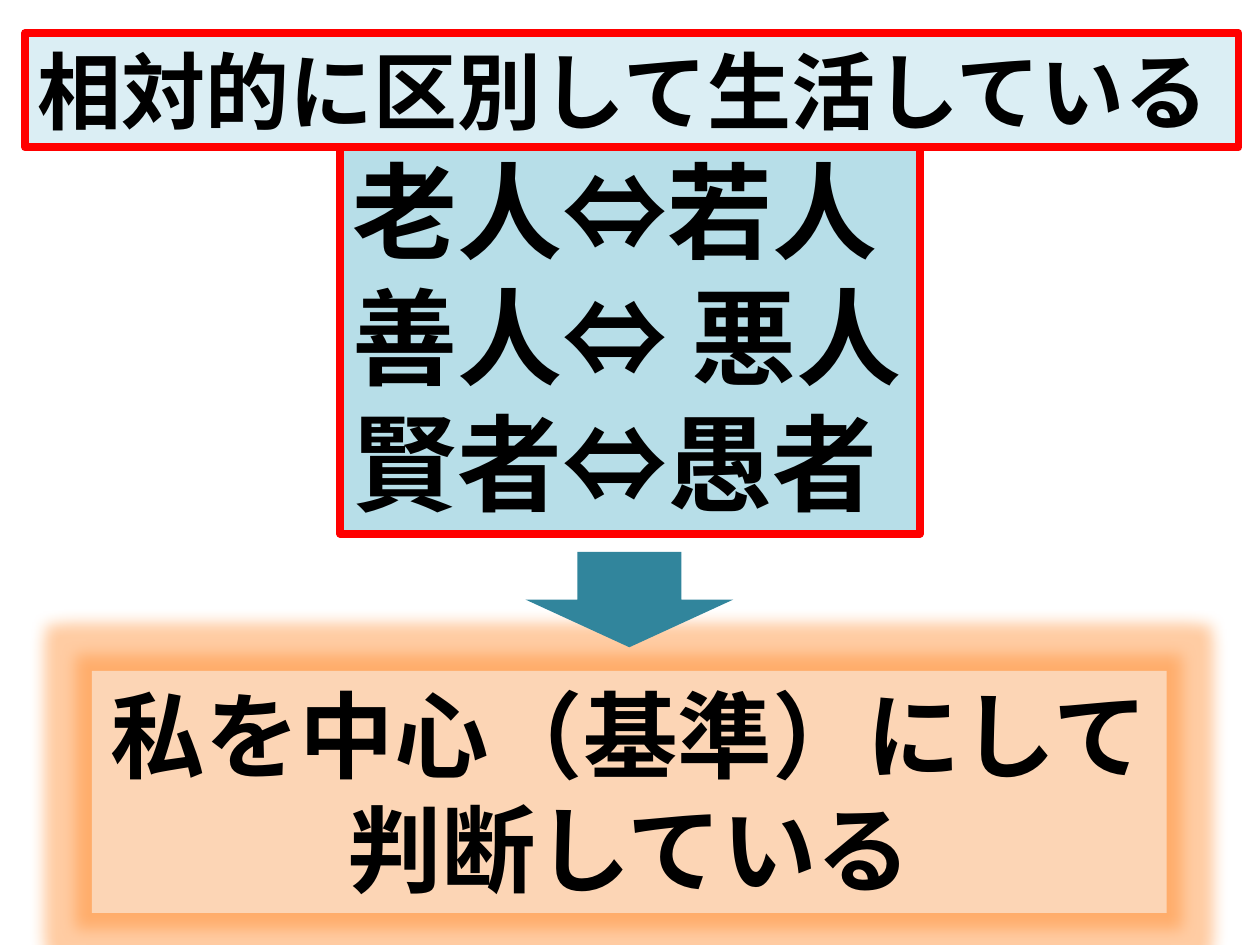
from pptx import Presentation
from pptx.dml.color import RGBColor
from pptx.enum.shapes import MSO_SHAPE as Shape
from pptx.enum.text import MSO_ANCHOR as Anchor, MSO_AUTO_SIZE as AutoSize, PP_ALIGN as Align
from pptx.oxml import parse_xml
from pptx.oxml.ns import nsdecls
from pptx.util import Inches, Pt

WIDTH, HEIGHT = 10, 7.5


def color(code):
    return RGBColor.from_string(code)


class SlideBuilder:
    """Holds the style and the current slide; places are shares of its size."""
    ink, border, border_width = "000000", "FF0000", 4.5

    def __init__(self, deck):
        self.page = deck.slides.add_slide(deck.slide_layouts[1])

    def place(self, box, left, top, width, height):
        box.left, box.width = Inches(left * WIDTH), Inches(width * WIDTH)
        box.top, box.height = Inches(top * HEIGHT), Inches(height * HEIGHT)

    def set_text(self, box, text, size, font, align):
        frame = box.text_frame
        frame.text = text
        frame.word_wrap = False
        frame.auto_size = AutoSize.NONE
        frame.vertical_anchor = Anchor.TOP
        for para in frame.paragraphs:
            para.alignment = align
            para.space_before = Pt(0)
            props = para._p.get_or_add_pPr()
            props.set("marL", "0")
            props.set("indent", "0")
            props.append(parse_xml(f'<a:buNone {nsdecls("a")}/>'))
            for span in para.runs:
                span.font.size, span.font.name = Pt(size), font
                span.font.bold = True
                span.font.color.rgb = color(self.ink)

    def fill(self, box, code):
        box.fill.solid()
        box.fill.fore_color.rgb = color(code)

    def framed(self, box, area, text, size, fill):
        self.place(box, *area)
        self.fill(box, fill)
        box.line.color.rgb = color(self.border)
        box.line.width = Pt(self.border_width)
        self.set_text(box, text, size, "Calibri", Align.LEFT)
        # Later boxes lie in front of earlier ones
        self.page.shapes._spTree.append(box._element)

    def shape(self, kind, area, fill):
        box = self.page.shapes.add_shape(kind, 0, 0, 0, 0)
        self.place(box, *area)
        box.shadow.inherit = False
        self.fill(box, fill)
        box.line.fill.background()
        return box

    def glow(self, box, code, radius, opacity):
        box._element.spPr.find("{*}effectLst").append(parse_xml(
            f'<a:glow {nsdecls("a")} rad="{Pt(radius)}"><a:srgbClr val="{code}">'
            f'<a:alpha val="{opacity * 1000}"/></a:srgbClr></a:glow>'))


def main():
    deck = Presentation()
    deck.slide_width, deck.slide_height = Inches(WIDTH), Inches(HEIGHT)
    builder = SlideBuilder(deck)
    title, body = builder.page.placeholders

    # Pairs of opposites, with the heading in front
    builder.framed(body, (0.27, 0.148, 0.46, 0.417),
                   "老人⇔若人\n善人⇔ 悪人\n賢者⇔愚者", 60, "B7DEE8")
    builder.framed(title, (0.02, 0.035, 0.963, 0.121),
                   "相対的に区別して生活している", 48, "DBEEF4")

    # Glowing conclusion
    conclusion = builder.shape(Shape.RECTANGLE, (0.073, 0.71, 0.853, 0.256), "FCD5B5")
    builder.glow(conclusion, "FF8019", 18, 40)
    builder.set_text(conclusion, "私を中心（基準）にして\n判断している", 54,
                     "Noto Sans CJK JP", Align.CENTER)

    # Arrow to the conclusion
    builder.shape(Shape.DOWN_ARROW, (0.417, 0.584, 0.165, 0.101), "31859C")

    deck.save("out.pptx")


if __name__ == "__main__":
    main()
